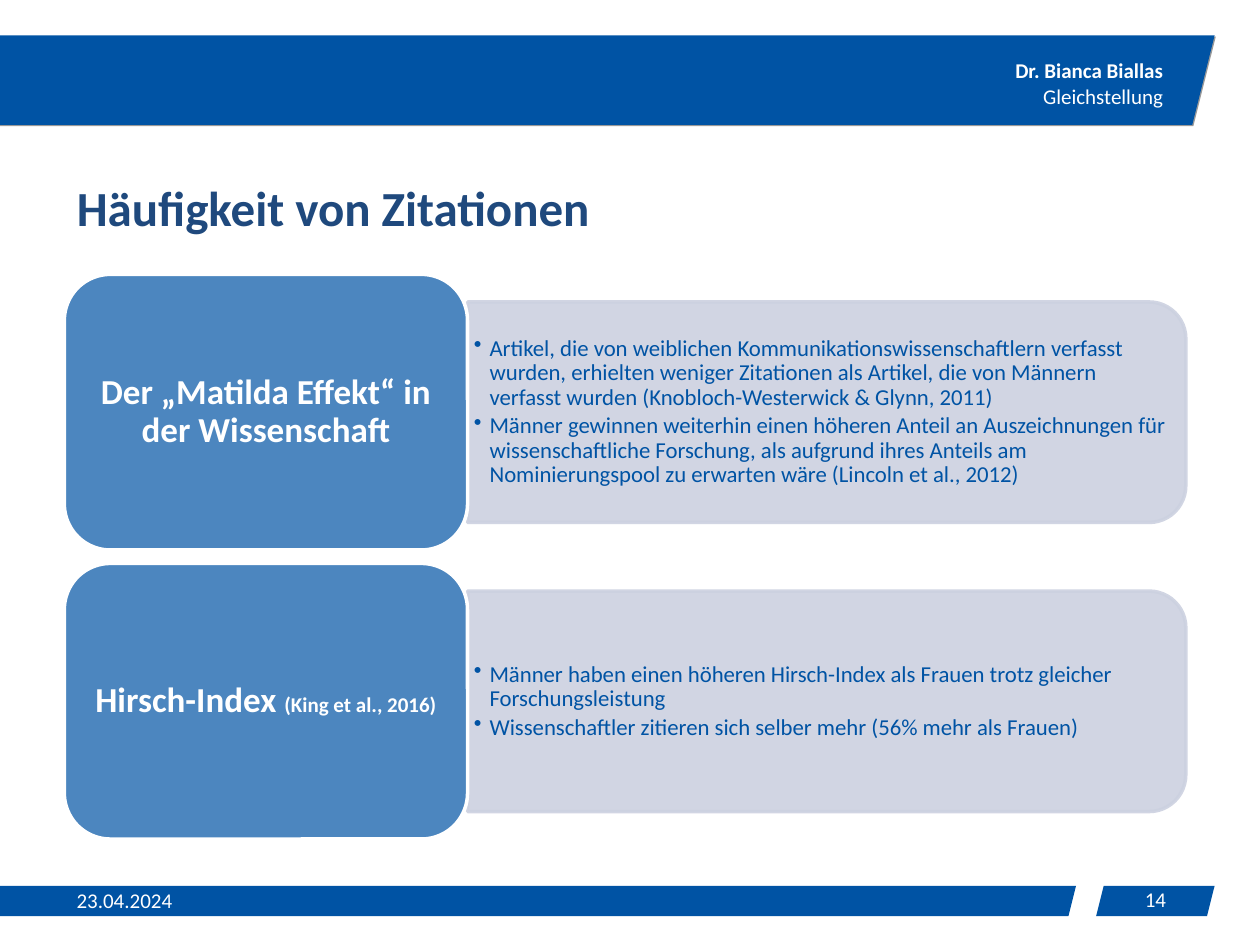
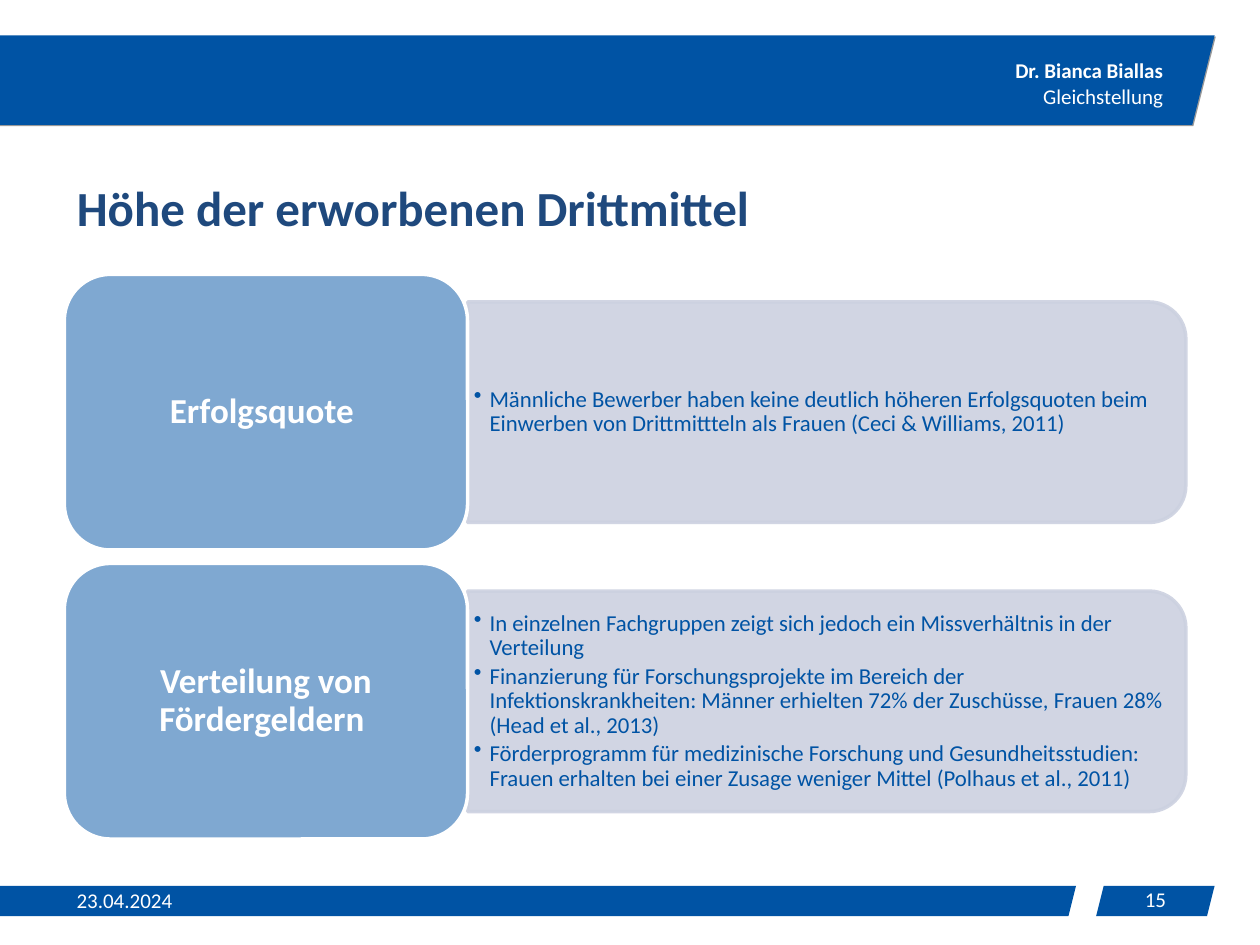
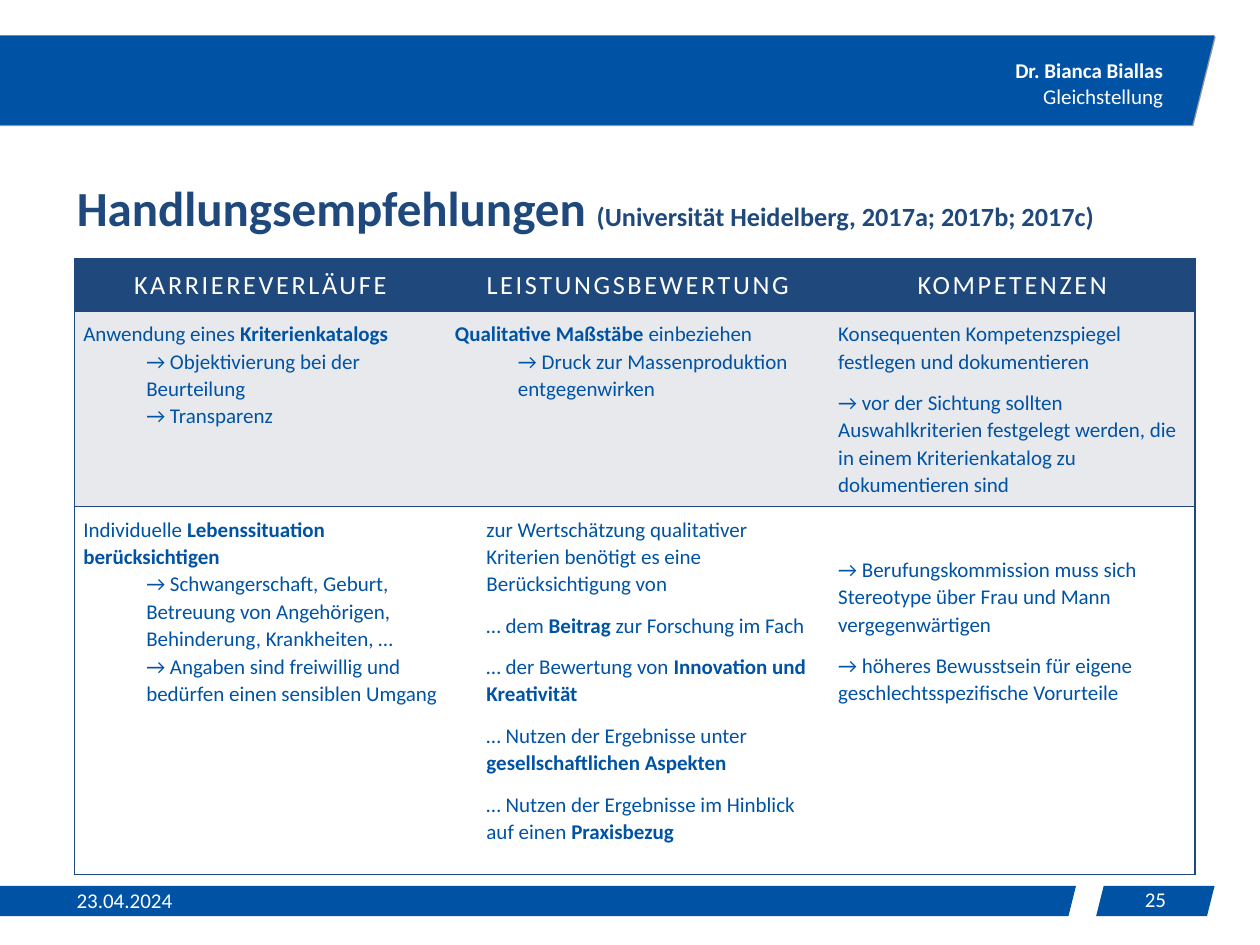
from dataclasses import dataclass

from lxml.etree import SubElement
from pptx import Presentation
from pptx.dml.color import RGBColor
from pptx.enum.shapes import MSO_SHAPE
from pptx.enum.text import MSO_ANCHOR, MSO_AUTO_SIZE, PP_ALIGN
from pptx.oxml.ns import qn
from pptx.shapes.autoshape import Shape
from pptx.slide import Slide
from pptx.table import _Cell
from pptx.text.text import TextFrame, _Paragraph
from pptx.util import Pt

BLUE = RGBColor(0x00, 0x53, 0xA4)
NAVY = RGBColor(0x1F, 0x49, 0x7D)
PANEL = RGBColor(0xCC, 0xD1, 0xE0)
GREY = RGBColor(0xE8, 0xE9, 0xEC)
WHITE = RGBColor(0xFF, 0xFF, 0xFF)
FONT = "Calibri"

TITLE_ONLY = 5
LABEL_LEFT, LABEL_WIDTH, LABEL_HEIGHT = 36.8, 230.4, 157.5
PANEL_LEFT, PANEL_WIDTH, PANEL_HEIGHT = 267.2, 410.4, 126
CARD_TOP, CARD_PITCH = 156.8, 165.2
LIST_WIDTH, LIST_HEIGHT = 404, 114

TABLE_LEFT, TABLE_TOP = 42.6, 147.9
COLUMN_WIDTHS = (212.4, 219, 209)
ROW_HEIGHTS = (30, 111.6, 210.2)
ROW_FILLS = (NAVY, GREY, WHITE)
CELL_MARGIN = 5


@dataclass(frozen=True)
class Box:
    left: float
    top: float
    width: float
    height: float

    def lengths(self) -> tuple[Pt, Pt, Pt, Pt]:
        return Pt(self.left), Pt(self.top), Pt(self.width), Pt(self.height)


@dataclass(frozen=True)
class Style:
    size: float
    color: RGBColor
    bold: bool = False
    align: PP_ALIGN = PP_ALIGN.LEFT


@dataclass(frozen=True)
class Card:
    label: str
    points: tuple[str, ...]
    note: str = ""


@dataclass(frozen=True)
class Entry:
    text: str
    indent: float = 0


@dataclass(frozen=True)
class Content:
    entries: tuple[Entry, ...]
    gap: float = 8
    margin_top: float = CELL_MARGIN


HEADER_BAND = Box(-14.4, 20.2, 708.5, 51.1)
FOOTER_BAND = Box(-14.4, 506.2, 629.3, 17.3)
NUMBER_BAND = Box(626.4, 506.2, 67.7, 17.3)
AUTHOR_BOX = Box(571.7, 29.5, 100.1, 36)
DATE_BOX = Box(36.7, 502.6, 79.2, 23)
NUMBER_BOX = Box(626.4, 502.6, 67.7, 22.3)
TITLE_BOX = Box(36.7, 94.3, 646.6, 44.6)

TITLE_STYLE = Style(28, NAVY, True)
AUTHOR_STYLE = Style(12, WHITE, True, PP_ALIGN.RIGHT)
UNIT_STYLE = Style(12, WHITE, align=PP_ALIGN.RIGHT)
DATE_STYLE = Style(12, WHITE)
NUMBER_STYLE = Style(12, WHITE, align=PP_ALIGN.CENTER)
LABEL_STYLE = Style(20, WHITE, True, PP_ALIGN.CENTER)
LIST_STYLE = Style(13, BLUE)
HEADING_STYLE = Style(15, WHITE, align=PP_ALIGN.CENTER)
CELL_STYLE = Style(12, BLUE)

CITATIONS = (
    Card("Der „Matilda Effekt“ in der Wissenschaft", (
        "Artikel, die von weiblichen Kommunikationswissenschaftlern verfasst wurden, erhielten "
        "weniger Zitationen als Artikel, die von Männern verfasst wurden "
        "(Knobloch-Westerwick & Glynn, 2011)",
        "Männer gewinnen weiterhin einen höheren Anteil an Auszeichnungen für wissenschaftliche "
        "Forschung, als aufgrund ihres Anteils am Nominierungspool zu erwarten wäre "
        "(Lincoln et al., 2012)",
    )),
    Card("Hirsch-Index ", (
        "Männer haben einen höheren Hirsch-Index als Frauen trotz gleicher Forschungsleistung",
        "Wissenschaftler zitieren sich selber mehr (56% mehr als Frauen)",
    ), "(King et al., 2016)"),
)
FUNDING = (
    Card("Erfolgsquote ", (
        "Männliche Bewerber haben keine deutlich höheren Erfolgsquoten beim Einwerben von "
        "Drittmittteln als Frauen (Ceci & Williams, 2011)",
    )),
    Card("Verteilung von Fördergeldern ", (
        "In einzelnen Fachgruppen zeigt sich jedoch ein Missverhältnis in der Verteilung",
        "Finanzierung für Forschungsprojekte im Bereich der Infektionskrankheiten: Männer "
        "erhielten 72% der Zuschüsse, Frauen 28% (Head et al., 2013)",
        "Förderprogramm für medizinische Forschung und Gesundheitsstudien: Frauen erhalten bei "
        "einer Zusage weniger Mittel (Polhaus et al., 2011)",
    )),
)
HEADINGS = ("KARRIEREVERLÄUFE", "LEISTUNGSBEWERTUNG", "KOMPETENZEN")
ADVICE = (
    (
        Content((
            Entry("Anwendung eines *Kriterienkatalogs*"),
            Entry("→ Objektivierung bei der Beurteilung", 36),
            Entry("→ Transparenz", 36),
        ), gap=0),
        Content((
            Entry("*Qualitative Maßstäbe *einbeziehen"),
            Entry("→ Druck zur Massenproduktion entgegenwirken", 36),
        ), gap=0),
        Content((
            Entry("Konsequenten Kompetenzspiegel festlegen und dokumentieren"),
            Entry("→ vor der Sichtung sollten Auswahlkriterien festgelegt werden, die in einem "
                  "Kriterienkatalog zu dokumentieren sind"),
        )),
    ),
    (
        Content((
            Entry("Individuelle* Lebenssituation berücksichtigen*"),
            Entry("→ Schwangerschaft, Geburt, Betreuung von Angehörigen, Behinderung, "
                  "Krankheiten, …", 36),
            Entry("→ Angaben sind freiwillig und bedürfen einen sensiblen Umgang", 36),
        ), gap=0),
        Content((
            Entry("zur Wertschätzung qualitativer Kriterien benötigt es eine "
                  "Berücksichtigung von", 18),
            Entry("… dem *Beitrag* zur Forschung im Fach", 18),
            Entry("… der Bewertung von *Innovation und Kreativität*", 18),
            Entry("… Nutzen der Ergebnisse unter *gesellschaftlichen Aspekten*", 18),
            Entry("… Nutzen der Ergebnisse im Hinblick auf einen *Praxisbezug*", 18),
        )),
        Content((
            Entry("→ Berufungskommission muss sich Stereotype über Frau und Mann "
                  "vergegenwärtigen"),
            Entry("→ höheres Bewusstsein für eigene geschlechtsspezifische Vorurteile"),
        ), margin_top=28),
    ),
)


def write(para: _Paragraph, text: str, style: Style) -> None:
    """Fill a paragraph; parts between asterisks become bold."""
    para.alignment = style.align
    para.font.name = FONT
    para.font.size = Pt(style.size)
    para.font.bold = style.bold
    para.font.color.rgb = style.color
    for index, part in enumerate(text.split("*")):
        if part:
            span = para.add_run()
            span.text = part
            if index % 2:
                span.font.bold = True


def add_note(para: _Paragraph, text: str, size: float) -> None:
    if text:
        span = para.add_run()
        span.text = text
        span.font.size = Pt(size)


def next_paragraph(frame: TextFrame, index: int) -> _Paragraph:
    return frame.add_paragraph() if index else frame.paragraphs[0]


def set_margins(target: TextFrame | _Cell, across: float, down: float) -> None:
    target.margin_left = target.margin_right = Pt(across)
    target.margin_top = target.margin_bottom = Pt(down)


def add_filled(page: Slide, kind: MSO_SHAPE, box: Box, color: RGBColor,
               opacity: int = 100) -> Shape:
    shape = page.shapes.add_shape(kind, *box.lengths())
    shape.shadow.inherit = False
    shape.fill.solid()
    shape.fill.fore_color.rgb = color
    shape.line.fill.background()
    set_opacity(shape, opacity)
    return shape


def set_opacity(shape: Shape, opacity: int) -> None:
    """Make every colour of the shape that is still solid translucent."""
    if opacity < 100:
        for color in shape.element.spPr.iter(qn("a:srgbClr")):
            if len(color) == 0:
                SubElement(color, qn("a:alpha"), val=str(opacity * 1000))


def outline(shape: Shape, color: RGBColor) -> None:
    shape.line.color.rgb = color
    shape.line.width = Pt(2)


def add_shadow(shape: Shape) -> None:
    effects = shape.element.spPr.find(qn("a:effectLst"))
    shadow = SubElement(effects, qn("a:outerShdw"), dist=str(Pt(1)), dir=str(45 * 60000))
    color = SubElement(shadow, qn("a:srgbClr"), val="000000")
    SubElement(color, qn("a:alpha"), val="40000")


def add_text(page: Slide, box: Box, *lines: tuple[str, Style], wrap: bool = True) -> None:
    frame = page.shapes.add_textbox(*box.lengths()).text_frame
    frame.word_wrap = wrap
    frame.vertical_anchor = MSO_ANCHOR.MIDDLE
    for index, (text, style) in enumerate(lines):
        write(next_paragraph(frame, index), text, style)


def add_page(deck: Presentation, number: int, title: str, note: str = "") -> Slide:
    page = deck.slides.add_slide(deck.slide_layouts[TITLE_ONLY])
    for band in (FOOTER_BAND, NUMBER_BAND):
        add_filled(page, MSO_SHAPE.PARALLELOGRAM, band, BLUE)
    add_shadow(add_filled(page, MSO_SHAPE.PARALLELOGRAM, HEADER_BAND, BLUE))
    add_text(page, AUTHOR_BOX, ("Dr. Bianca Biallas", AUTHOR_STYLE),
             ("Gleichstellung", UNIT_STYLE), wrap=False)
    add_text(page, DATE_BOX, ("23.04.2024", DATE_STYLE))
    add_text(page, NUMBER_BOX, (str(number), NUMBER_STYLE))

    heading = page.shapes.title
    heading.left, heading.top, heading.width, heading.height = TITLE_BOX.lengths()
    frame = heading.text_frame
    frame.auto_size = MSO_AUTO_SIZE.NONE
    frame.vertical_anchor = MSO_ANCHOR.BOTTOM
    write(frame.paragraphs[0], title, TITLE_STYLE)
    add_note(frame.paragraphs[0], note, 15)
    return page


def add_points(page: Slide, box: Box, points: tuple[str, ...]) -> None:
    frame = page.shapes.add_textbox(*box.lengths()).text_frame
    frame.word_wrap = True
    frame.vertical_anchor = MSO_ANCHOR.MIDDLE
    set_margins(frame, 3.6, 2.2)
    for index, point in enumerate(points):
        para = next_paragraph(frame, index)
        para.line_spacing = 0.9
        para.space_after = Pt(2)
        properties = para._p.get_or_add_pPr()
        properties.set("marL", str(Pt(9)))
        properties.set("indent", str(Pt(-9)))
        SubElement(properties, qn("a:buChar"), char="•")
        write(para, point, LIST_STYLE)


def add_cards(page: Slide, cards: tuple[Card, ...], label_opacity: int) -> None:
    for index, card in enumerate(cards):
        top = CARD_TOP + index * CARD_PITCH
        middle = top + LABEL_HEIGHT / 2
        center = PANEL_LEFT + PANEL_WIDTH / 2

        upright = Box(center - PANEL_HEIGHT / 2, middle - PANEL_WIDTH / 2,
                      PANEL_HEIGHT, PANEL_WIDTH)
        panel = add_filled(page, MSO_SHAPE.ROUND_2_SAME_RECTANGLE, upright, PANEL)
        panel.rotation = 90
        outline(panel, PANEL)
        set_opacity(panel, 90)
        add_points(page, Box(PANEL_LEFT, middle - LIST_HEIGHT / 2, LIST_WIDTH, LIST_HEIGHT),
                   card.points)

        label = add_filled(page, MSO_SHAPE.ROUNDED_RECTANGLE,
                           Box(LABEL_LEFT, top, LABEL_WIDTH, LABEL_HEIGHT), BLUE, label_opacity)
        outline(label, WHITE)
        frame = label.text_frame
        frame.word_wrap = True
        frame.vertical_anchor = MSO_ANCHOR.MIDDLE
        set_margins(frame, 5.8, 2.9)
        para = frame.paragraphs[0]
        para.line_spacing = 0.9
        write(para, card.label, LABEL_STYLE)
        add_note(para, card.note, 12)


def set_borders(cell: _Cell, sides: str) -> None:
    """Draw the named sides (of L, R, T, B) and clear the others."""
    properties = cell._tc.get_or_add_tcPr()
    for side in "LRTB":
        line = SubElement(properties, qn(f"a:ln{side}"), w=str(Pt(1)))
        if side in sides:
            fill = SubElement(line, qn("a:solidFill"))
            SubElement(fill, qn("a:srgbClr"), val=str(NAVY))
        else:
            SubElement(line, qn("a:noFill"))


def fill_cell(cell: _Cell, content: Content, style: Style) -> None:
    set_margins(cell, CELL_MARGIN, CELL_MARGIN)
    cell.margin_top = Pt(content.margin_top)
    for index, entry in enumerate(content.entries):
        para = next_paragraph(cell.text_frame, index)
        para.line_spacing = 1.07
        para.space_after = Pt(content.gap)
        if entry.indent:
            para._p.get_or_add_pPr().set("marL", str(Pt(entry.indent)))
        write(para, entry.text, style)


def add_advice_table(page: Slide) -> None:
    box = Box(TABLE_LEFT, TABLE_TOP, sum(COLUMN_WIDTHS), sum(ROW_HEIGHTS))
    table = page.shapes.add_table(len(ROW_HEIGHTS), len(COLUMN_WIDTHS), *box.lengths()).table
    table.first_row = table.horz_banding = False
    for column, width in zip(table.columns, COLUMN_WIDTHS):
        column.width = Pt(width)
    headings = tuple(Content((Entry(heading),), gap=0) for heading in HEADINGS)
    last = len(COLUMN_WIDTHS) - 1
    for row, contents in enumerate((headings, *ADVICE)):
        table.rows[row].height = Pt(ROW_HEIGHTS[row])
        for column, content in enumerate(contents):
            cell = table.cell(row, column)
            set_borders(cell, "TB" + "L" * (column == 0) + "R" * (column == last))
            cell.fill.solid()
            cell.fill.fore_color.rgb = ROW_FILLS[row]
            fill_cell(cell, content, CELL_STYLE if row else HEADING_STYLE)
            if row == 0:
                for span in cell.text_frame.paragraphs[0].runs:
                    span._r.get_or_add_rPr().set("spc", "150")


def main() -> None:
    deck = Presentation()
    deck.slide_width, deck.slide_height = Pt(720), Pt(540)
    add_cards(add_page(deck, 14, "Häufigkeit von Zitationen"), CITATIONS, 70)
    add_cards(add_page(deck, 15, "Höhe der erworbenen Drittmittel"), FUNDING, 50)
    add_advice_table(add_page(deck, 25, "Handlungsempfehlungen ",
                              "(Universität Heidelberg, 2017a; 2017b; 2017c)"))
    deck.save("out.pptx")


if __name__ == "__main__":
    main()
